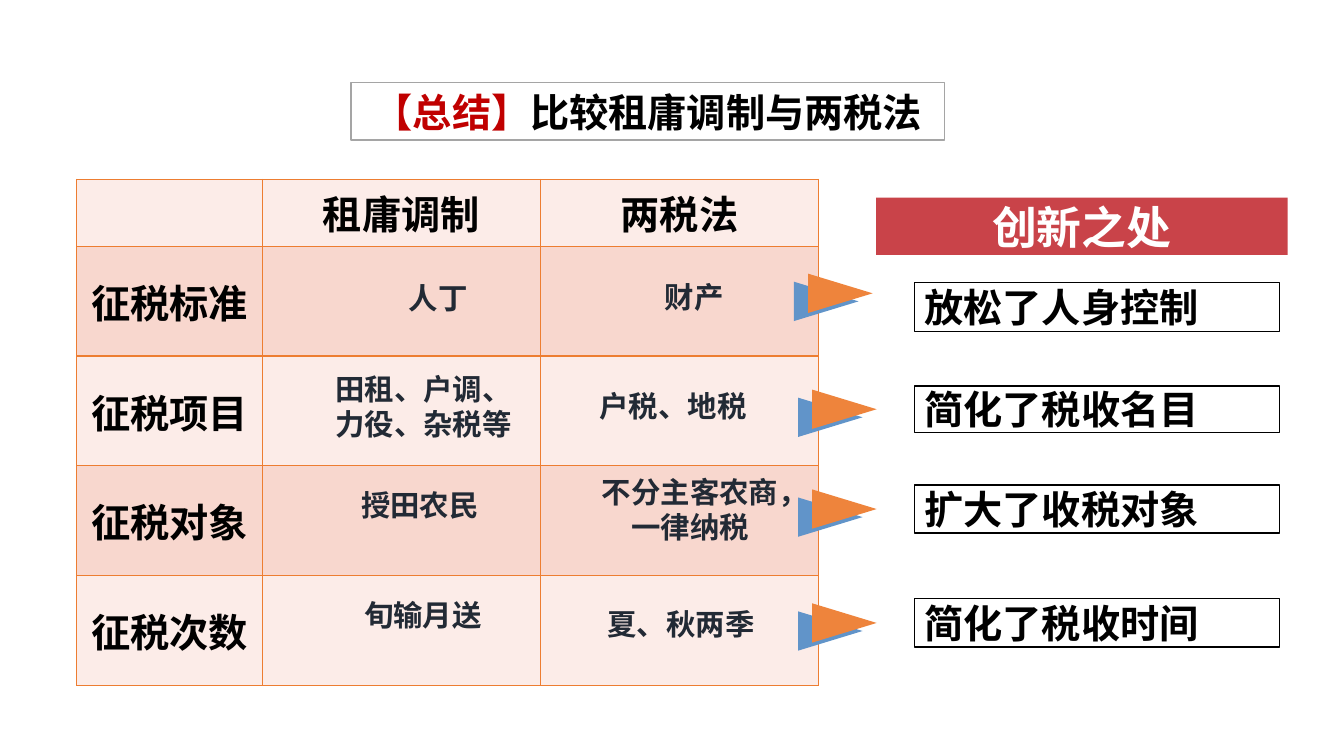
from lxml import etree
from pptx import Presentation
from pptx.dml.color import RGBColor
from pptx.enum import shapes, text
from pptx.oxml.ns import qn
from pptx.util import Inches, Pt

FONT = "Noto Sans CJK SC"
COLORS = {
    "black": "000000", "white": "FFFFFF", "red": "C00000", "banner": "C94349",
    "gray": "A5A5A5", "answer": "222A35", "border": "ED7D31",
    "light": "FCECE8", "dark": "F8D7CE", "blue": "6194C9", "orange": "EE843C",
}
ROW_TITLES = ["征税标准", "征税项目", "征税对象", "征税次数"]
ANSWERS = [
    (3.95, 2.73, 0.79, 0.45, ["人丁"]),
    (6.49, 2.72, 0.79, 0.45, ["财产"]),
    (3.22, 3.63, 1.96, 0.81, ["田租、户调、", "力役、杂税等"]),
    (5.84, 3.8, 1.67, 0.45, ["户税、地税"]),
    (3.48, 4.78, 1.37, 0.45, ["授田农民"]),
    (5.81, 4.65, 2.07, 0.81, ["不分主客农商，一律纳税"]),
    (3.51, 5.87, 1.37, 0.45, ["旬输月送"]),
    (5.92, 5.96, 1.67, 0.45, ["夏、秋两季"]),
]
INNOVATIONS = [
    (2.8, 0.49, "放松了人身控制"),
    (3.83, 0.46, "简化了税收名目"),
    (4.81, 0.48, "扩大了收税对象"),
    (5.94, 0.48, "简化了税收时间"),
]
ARROWS = [(8, 2.67), (8.04, 3.82), (8.04, 4.81), (8.04, 5.94)]


def color(name):
    return RGBColor.from_string(COLORS[name])


def format_run(run, size, color_name):
    run.font.name = FONT
    run.font.size = Pt(size)
    run.font.bold = True
    run.font.color.rgb = color(color_name)
    etree.SubElement(run.font._element, qn("a:ea"), typeface=FONT)


def format_text(frame, size, color_name, align):
    for paragraph in frame.paragraphs:
        paragraph.alignment = align
        for run in paragraph.runs:
            format_run(run, size, color_name)


def set_margins(frame, side, top):
    frame.margin_left = frame.margin_right = Inches(side)
    frame.margin_top = frame.margin_bottom = Inches(top)


def add_title(slide):
    title = slide.shapes.title
    title.left, title.top = Inches(3.48), Inches(0.82)
    title.width, title.height = Inches(5.89), Inches(0.57)
    title.line.color.rgb = color("gray")
    title.line.width = Pt(1)
    frame = title.text_frame
    frame.auto_size = text.MSO_AUTO_SIZE.NONE
    frame.vertical_anchor = text.MSO_ANCHOR.MIDDLE
    set_margins(frame, 0.08, 0.04)
    paragraph = frame.paragraphs[0]
    paragraph.alignment = text.PP_ALIGN.CENTER
    for words, color_name in [("【总结】", "red"), ("比较租庸调制与两税法", "black")]:
        run = paragraph.add_run()
        run.text = words
        format_run(run, 28, color_name)


def set_borders(cell):
    properties = cell._tc.get_or_add_tcPr()
    for index, side in enumerate(["lnL", "lnR", "lnT", "lnB"]):
        line = etree.Element(qn(f"a:{side}"), w=str(Pt(1)))
        fill = etree.SubElement(line, qn("a:solidFill"))
        etree.SubElement(fill, qn("a:srgbClr"), val=COLORS["border"])
        properties.insert(index, line)


def add_tax_table(slide):
    rows = [["", "租庸调制", "两税法"]] + [[title, "", ""] for title in ROW_TITLES]
    frame = slide.shapes.add_table(
        len(rows), 3, Inches(0.76), Inches(1.78), Inches(7.37), Inches(4.96))
    table = frame.table
    for column, width in zip(table.columns, [1.84, 2.76, 2.76]):
        column.width = Inches(width)
    for index, values in enumerate(rows):
        table.rows[index].height = Inches(1.09 if index else 0.61)
        for column, value in enumerate(values):
            cell = table.cell(index, column)
            cell.fill.solid()
            cell.fill.fore_color.rgb = color("dark" if index % 2 else "light")
            set_borders(cell)
            cell.vertical_anchor = text.MSO_ANCHOR.MIDDLE
            if value:
                cell.text_frame.text = value
                format_text(cell.text_frame, 28, "black", text.PP_ALIGN.CENTER)


def add_answer(slide, left, top, width, height, lines):
    box = slide.shapes.add_textbox(
        Inches(left), Inches(top), Inches(width), Inches(height))
    frame = box.text_frame
    frame.text = "\n".join(lines)
    frame.word_wrap = width > 2
    frame.auto_size = text.MSO_AUTO_SIZE.SHAPE_TO_FIT_TEXT
    format_text(frame, 21, "answer", text.PP_ALIGN.CENTER)


def add_filled_shape(slide, kind, left, top, width, height, fill):
    shape = slide.shapes.add_shape(
        kind, Inches(left), Inches(top), Inches(width), Inches(height))
    shape.shadow.inherit = False
    shape.fill.solid()
    shape.fill.fore_color.rgb = color(fill)
    shape.line.fill.background()
    return shape


def add_arrow(slide, left, top):
    for offset_x, offset_y, fill in [(0, 0, "blue"), (0.14, -0.08, "orange")]:
        triangle = add_filled_shape(
            slide, shapes.MSO_SHAPE.ISOSCELES_TRIANGLE,
            left + offset_x, top + offset_y, 0.39, 0.64, fill)
        triangle.rotation = 90


def add_innovation(slide, top, height, words):
    box = add_filled_shape(
        slide, shapes.MSO_SHAPE.RECTANGLE, 9.07, top, 3.62, height, "white")
    box.line.color.rgb = color("black")
    box.line.width = Pt(1)
    box.text_frame.text = words
    format_text(box.text_frame, 28, "black", text.PP_ALIGN.LEFT)


def add_banner(slide):
    banner = add_filled_shape(
        slide, shapes.MSO_SHAPE.RECTANGLE, 8.69, 1.96, 4.08, 0.57, "banner")
    banner.text_frame.text = "创新之处"
    set_margins(banner.text_frame, 0.08, 0.04)
    format_text(banner.text_frame, 32, "white", text.PP_ALIGN.CENTER)


def main():
    presentation = Presentation()
    presentation.slide_width = Inches(13.33)
    presentation.slide_height = Inches(7.5)
    slide = presentation.slides.add_slide(presentation.slide_layouts[5])
    add_title(slide)
    add_tax_table(slide)
    for answer in ANSWERS:
        add_answer(slide, *answer)
    for arrow in ARROWS:
        add_arrow(slide, *arrow)
    for innovation in INNOVATIONS:
        add_innovation(slide, *innovation)
    add_banner(slide)
    presentation.save("out.pptx")


if __name__ == "__main__":
    main()
